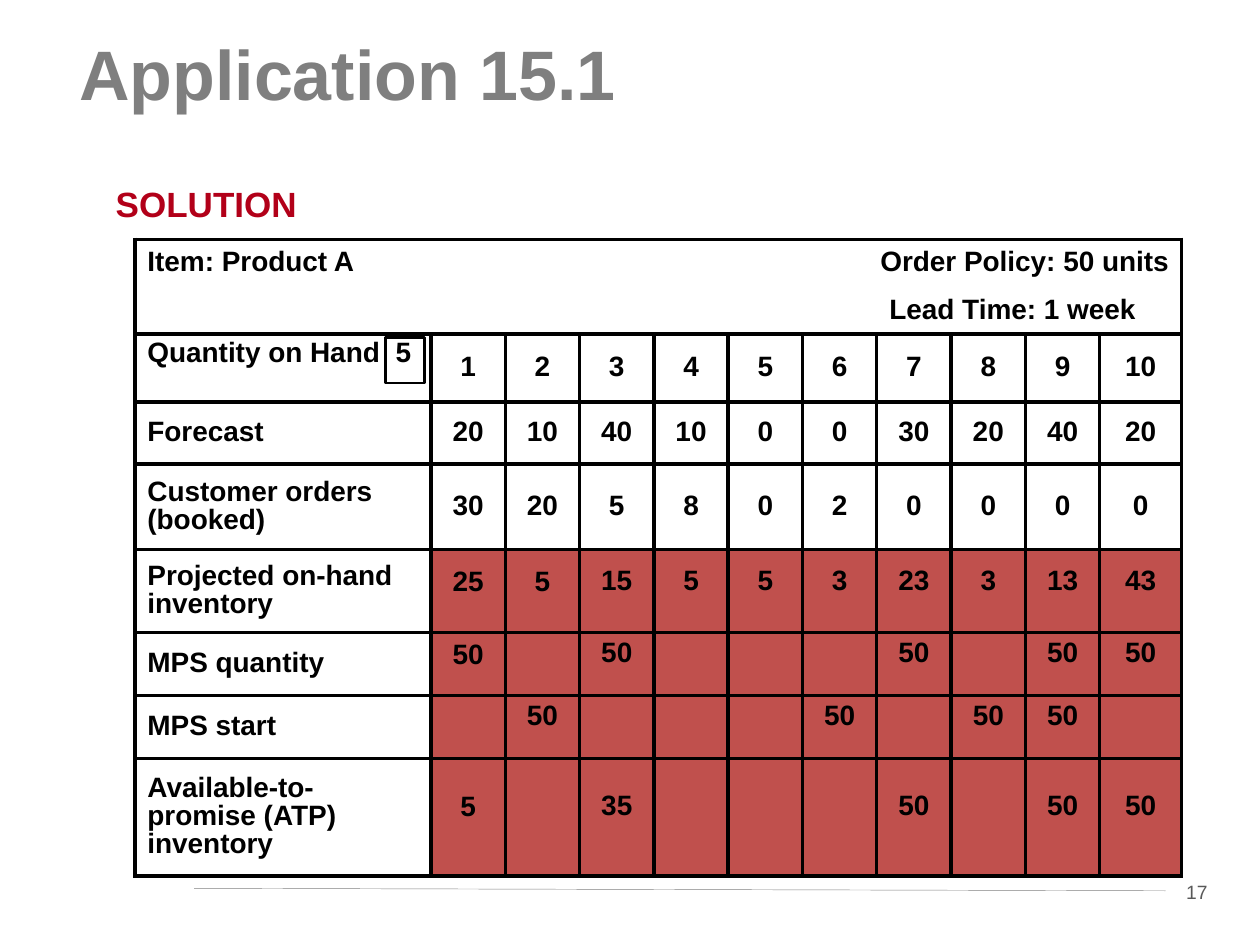
from lxml.etree import SubElement as Sub
from pptx import Presentation
from pptx.dml.color import RGBColor
from pptx.enum.shapes import MSO_CONNECTOR as Link, MSO_SHAPE as Kind
from pptx.enum.text import MSO_ANCHOR as Anchor, PP_ALIGN as Align
from pptx.oxml.ns import qn
from pptx.util import Inches, Pt

PLAIN = "{2D5ABB26-0587-4C30-8999-92F81FD0307C}"
WIDE, NARROW, LAST = 23.5, 5.9, 6.5
RED, WHITE, BLACK = "C0504D", "FFFFFF", "000000"


def hue(code):
    return RGBColor.from_string(code)


def unit(n):
    """Length of n cells of a grid of 100 columns by 75 rows."""
    return Inches(n / 10)


def put(obj, vals):
    for name, val in vals.items():
        setattr(obj, name, val)


class Page:
    font = {"name": "Arial", "bold": True}

    def __init__(self, deck):
        self.slide = deck.slides.add_slide(deck.slide_layouts[5])
        self.shapes = self.slide.shapes

    def text(self, frame, words, size, color, align=Align.LEFT, tab=None, **look):
        para = frame.paragraphs[0]
        if tab:
            stops = Sub(para._p.get_or_add_pPr(), qn("a:tabLst"))
            Sub(stops, qn("a:tab"), pos=str(unit(tab)), algn="l")
        para.alignment = align
        run = para.add_run()
        run.text = words
        put(run.font, {**self.font, "size": Pt(size), **look})
        run.font.color.rgb = hue(color)

    def title(self, at, words):
        box = self.shapes.title
        put(box, dict(zip(("left", "top", "width", "height"), map(unit, at))))
        put(box.text_frame, {"vertical_anchor": Anchor.TOP, "margin_top": unit(1.1)})
        self.text(box.text_frame, words, 40, "7F7F7F")

    def label(self, at, words, size, color):
        box = self.shapes.add_textbox(*map(unit, at))
        box.text_frame.word_wrap = False
        self.text(box.text_frame, words, size, color)

    def box(self, at, fill=None, line=None):
        shape = self.shapes.add_shape(Kind.RECTANGLE, *map(unit, at))
        shape.shadow.inherit = False
        if fill:
            shape.fill.solid()
            shape.fill.fore_color.rgb = hue(fill)
        else:
            shape.fill.background()
        if line:
            shape.line.color.rgb = hue(line)
            shape.line.width = Pt(1.5)
        else:
            shape.line.fill.background()
        return shape

    def rule(self, ends, color, width):
        line = self.shapes.add_connector(Link.STRAIGHT, *map(unit, ends))
        line.line.color.rgb = hue(color)
        line.line.width = Pt(width)
        Sub(line._element.spPr, qn("a:effectLst"))

    def table(self, left, top, cols, rows):
        frame = self.shapes.add_table(len(rows), len(cols), unit(left), unit(top),
                                      unit(sum(cols)), unit(sum(rows)))
        grid = frame.table
        put(grid, {"first_row": False, "horz_banding": False})
        grid._tbl.tblPr.find(qn("a:tableStyleId")).text = PLAIN
        for col, size in zip(grid.columns, cols):
            col.width = unit(size)
        for row, size in zip(grid.rows, rows):
            row.height = unit(size)
        return grid

    def cell(self, cell, words="", fill=None, edges="", align=Align.CENTER,
             anchor=Anchor.MIDDLE, tab=None):
        cell.vertical_anchor = anchor
        for side in edges:
            line = Sub(cell._tc.get_or_add_tcPr(), qn("a:ln" + side), w=str(Pt(2.25)))
            Sub(Sub(line, qn("a:solidFill")), qn("a:srgbClr"), val=BLACK)
        if fill:
            cell.fill.solid()
            cell.fill.fore_color.rgb = hue(fill)
        else:
            cell.fill.background()
        para = cell.text_frame.paragraphs[0]
        if words:
            self.text(cell.text_frame, words, 16, BLACK, align, tab)
        else:
            Sub(para._p, qn("a:endParaRPr"), sz="1600")
        para.line_spacing = 0.9

    def values(self, left, top, cols, data):
        """Clear table of results laid over the red cells."""
        grid = self.table(left, top, cols, [6.6, 4.9, 5, 9.3])
        for r, row in enumerate(data):
            for c, num in enumerate(row.split(",")):
                self.cell(grid.cell(r, c), num)


def plan(page):
    """Master schedule with its heading, input rows and red result area."""
    grid = page.table(10.7, 19, [WIDE] + [NARROW] * 9 + [LAST],
                      [3.8, 3.5, 5.4, 4.9, 6.8, 6.6, 5, 5, 9.3])
    for r, first, last in ((0, 1, 10), (1, 1, 6), (1, 7, 10)):
        grid.cell(r, first).merge(grid.cell(r, last))
    heads = {(0, 0): ("Item: Product A", Align.LEFT),
             (0, 1): ("Order Policy: 50 units", Align.RIGHT),
             (1, 7): ("Lead Time: 1 week", Align.LEFT)}
    for r, (side, ends) in enumerate((("T", (1, 10)), ("B", (7, 10)))):
        for c in range(11):
            words, align = heads.get((r, c), ("", Align.LEFT))
            edges = ("L" if c == 0 else "R" if c in ends else "") + side
            page.cell(grid.cell(r, c), words, edges=edges, align=align)
    blank = [""] * 10
    rows = (("Quantity on Hand\t5", range(1, 11), None),
            ("Forecast", (20, 10, 40, 10, 0, 0, 30, 20, 40, 20), WHITE),
            ("Customer orders (booked)", (30, 20, 5, 8, 0, 2, 0, 0, 0, 0), WHITE),
            ("Projected on-hand inventory", blank, RED),
            ("MPS quantity", blank, RED),
            ("MPS start", blank, RED),
            ("Available-to-promise (ATP) inventory", blank, RED))
    for r, (name, nums, fill) in enumerate(rows, 2):
        top = {"anchor": Anchor.TOP, "tab": 19.7} if r == 2 else {}
        page.cell(grid.cell(r, 0), name, edges="LRTB", align=Align.LEFT, **top)
        for c, num in enumerate(nums, 1):
            page.cell(grid.cell(r, c), str(num), fill, "LRTB")


def main():
    deck = Presentation()
    put(deck, {"slide_width": unit(100), "slide_height": unit(75)})
    page = Page(deck)
    number = page.box((92.5, 69.3, 5, 2.9), fill=WHITE)
    page.text(number.text_frame, "17", 11, "595959", Align.CENTER, bold=False)
    page.rule((15.4, 70.5, 92.5, 70.7), "808080", 0.25)
    page.title((5.3, 1.3, 89.4, 10.1), "Application 15.1")
    plan(page)
    page.box((30.6, 26.8, 3.1, 3.6), line=BLACK)
    page.label((8.2, 14, 16.4, 4.3), "SOLUTION", 20, "B20019")
    page.values(34.2, 43, [NARROW] * 2, ("25,5", "50,", ",", "5,"))
    page.values(46, 42.9, [NARROW] * 7 + [LAST],
                (",5,5,3,23,3,13,43", "50,,,,50,,50,50",
                 ",,,50,,50,50,", "35,,,,50,,50,50"))
    page.values(34.2, 42.9, [NARROW] * 3, (",,15", ",,", ",50,", ",,"))
    deck.save("out.pptx")


if __name__ == "__main__":
    main()
